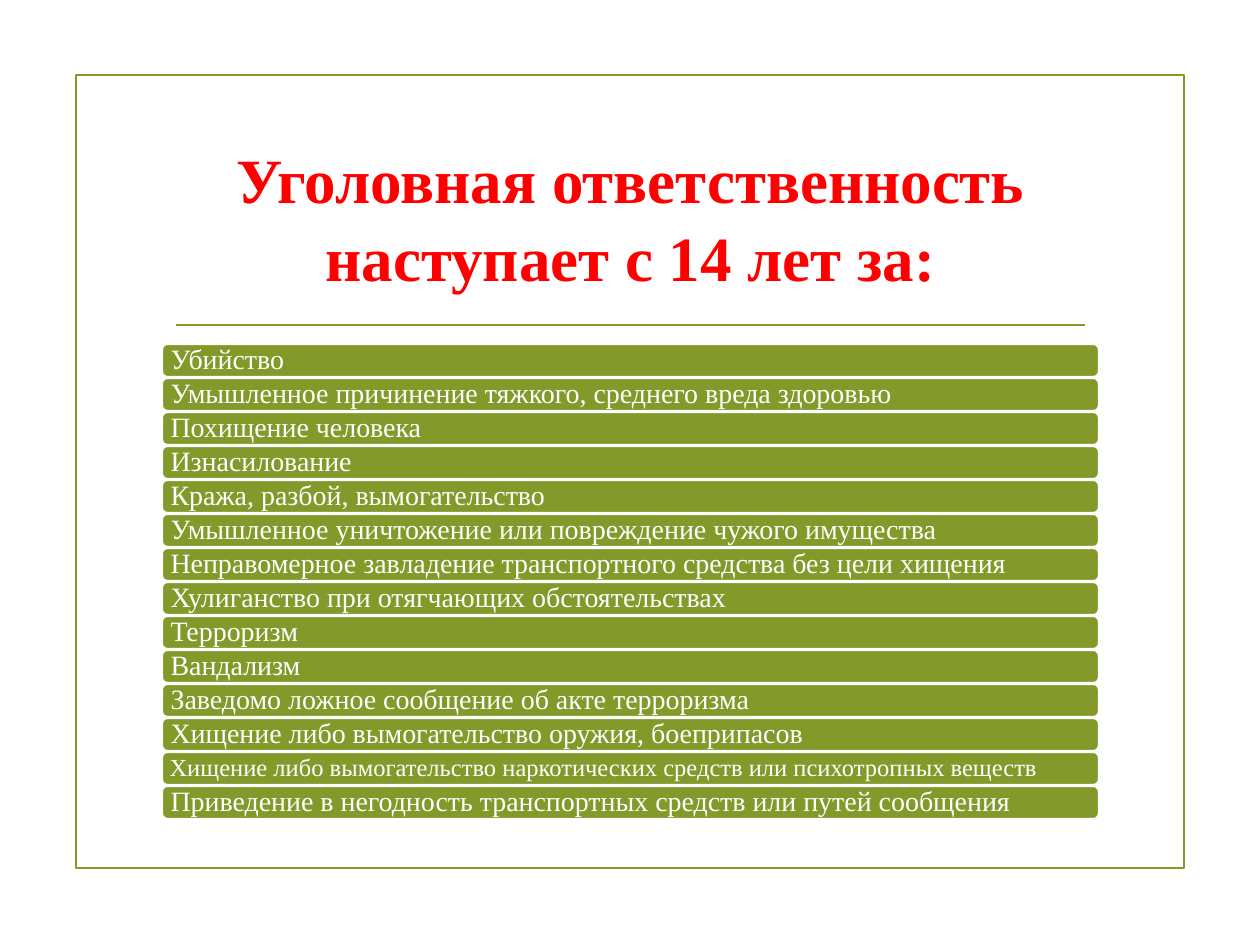
from lxml.etree import SubElement
from pptx import Presentation
from pptx.dml.color import RGBColor
from pptx.enum.shapes import MSO_CONNECTOR, MSO_SHAPE
from pptx.enum.text import MSO_ANCHOR, MSO_AUTO_SIZE, PP_ALIGN
from pptx.oxml.ns import qn
from pptx.util import Emu, Pt

PX = 914400 // 126
FONT = "Times New Roman"
GREEN, WHITE, RED = "83992A", "FFFFFF", "FF0000"
LINE_WIDTH = Pt(1.25)
OFFENCES = [
    ("Убийство", 16),
    ("Умышленное причинение тяжкого, среднего вреда здоровью", 16),
    ("Похищение человека", 16),
    ("Изнасилование", 16),
    ("Кража, разбой, вымогательство", 16),
    ("Умышленное уничтожение или повреждение чужого имущества", 16),
    ("Неправомерное завладение транспортного средства без цели хищения", 16),
    ("Хулиганство при отягчающих обстоятельствах", 16),
    ("Терроризм", 16),
    ("Вандализм", 16),
    ("Заведомо ложное сообщение об акте терроризма", 16),
    ("Хищение либо вымогательство оружия, боеприпасов", 16),
    ("Хищение либо вымогательство наркотических средств или психотропных веществ", 14),
    ("Приведение в негодность транспортных средств или путей сообщения", 16),
]


def px(length):
    return Emu(length * PX)


def color(value):
    return RGBColor.from_string(value)


def set_line(shape, value):
    shape.line.color.rgb = color(value)
    shape.line.width = LINE_WIDTH


def format_text(paragraph, size, value, bold=False):
    for run in paragraph.runs:
        font = run.font
        font.name, font.size, font.bold = FONT, Pt(size), bold
        font.color.rgb = color(value)


def add_frame(slide, left, top, width, height):
    frame = slide.shapes.add_shape(MSO_SHAPE.RECTANGLE, px(left), px(top), px(width), px(height))
    frame.shadow.inherit = False
    frame.fill.background()
    set_line(frame, GREEN)


def add_divider(slide, left, top, width):
    divider = slide.shapes.add_connector(
        MSO_CONNECTOR.STRAIGHT, px(left), px(top), px(left + width), px(top))
    set_line(divider, GREEN)
    SubElement(divider.element.spPr, qn("a:effectLst"))


def place_title(slide, text, left, top, width, height):
    title = slide.shapes.title
    title.left, title.top, title.width, title.height = px(left), px(top), px(width), px(height)
    text_frame = title.text_frame
    text_frame.text = text
    text_frame.word_wrap = True
    text_frame.auto_size = MSO_AUTO_SIZE.NONE
    text_frame.vertical_anchor = MSO_ANCHOR.MIDDLE
    paragraph = text_frame.paragraphs[0]
    paragraph.alignment = PP_ALIGN.CENTER
    paragraph.line_spacing = 1.03
    format_text(paragraph, 36, RED, bold=True)


def add_bar(slide, text, size, left, top, width, height):
    bar = slide.shapes.add_shape(
        MSO_SHAPE.ROUNDED_RECTANGLE, px(left), px(top), px(width), px(height))
    bar.shadow.inherit = False
    bar.fill.solid()
    bar.fill.fore_color.rgb = color(GREEN)
    set_line(bar, WHITE)
    text_frame = bar.text_frame
    text_frame.text = text
    text_frame.word_wrap = True
    text_frame.vertical_anchor = MSO_ANCHOR.MIDDLE
    text_frame.margin_left = text_frame.margin_right = px(size * 7 // 16)
    text_frame.margin_top = text_frame.margin_bottom = 0
    paragraph = text_frame.paragraphs[0]
    paragraph.alignment = PP_ALIGN.LEFT
    paragraph.line_spacing = 0.9
    format_text(paragraph, size, WHITE)


def add_bar_list(slide, items, left, top, width, height):
    """Stack one bar per item, evenly filling the box."""
    pitch = height // len(items)
    for index, (text, size) in enumerate(items):
        add_bar(slide, text, size, left, top + index * pitch, width, pitch - 1)


def main():
    presentation = Presentation()
    presentation.slide_width, presentation.slide_height = px(1260), px(945)
    slide = presentation.slides.add_slide(presentation.slide_layouts[5])
    add_frame(slide, 76, 75, 1108, 793)
    add_divider(slide, 176, 325, 909)
    place_title(slide, "Уголовная ответственность наступает с 14 лет за:", 162, 126, 937, 180)
    add_bar_list(slide, OFFENCES, 162, 344, 937, 476)
    presentation.save("out.pptx")


if __name__ == "__main__":
    main()
